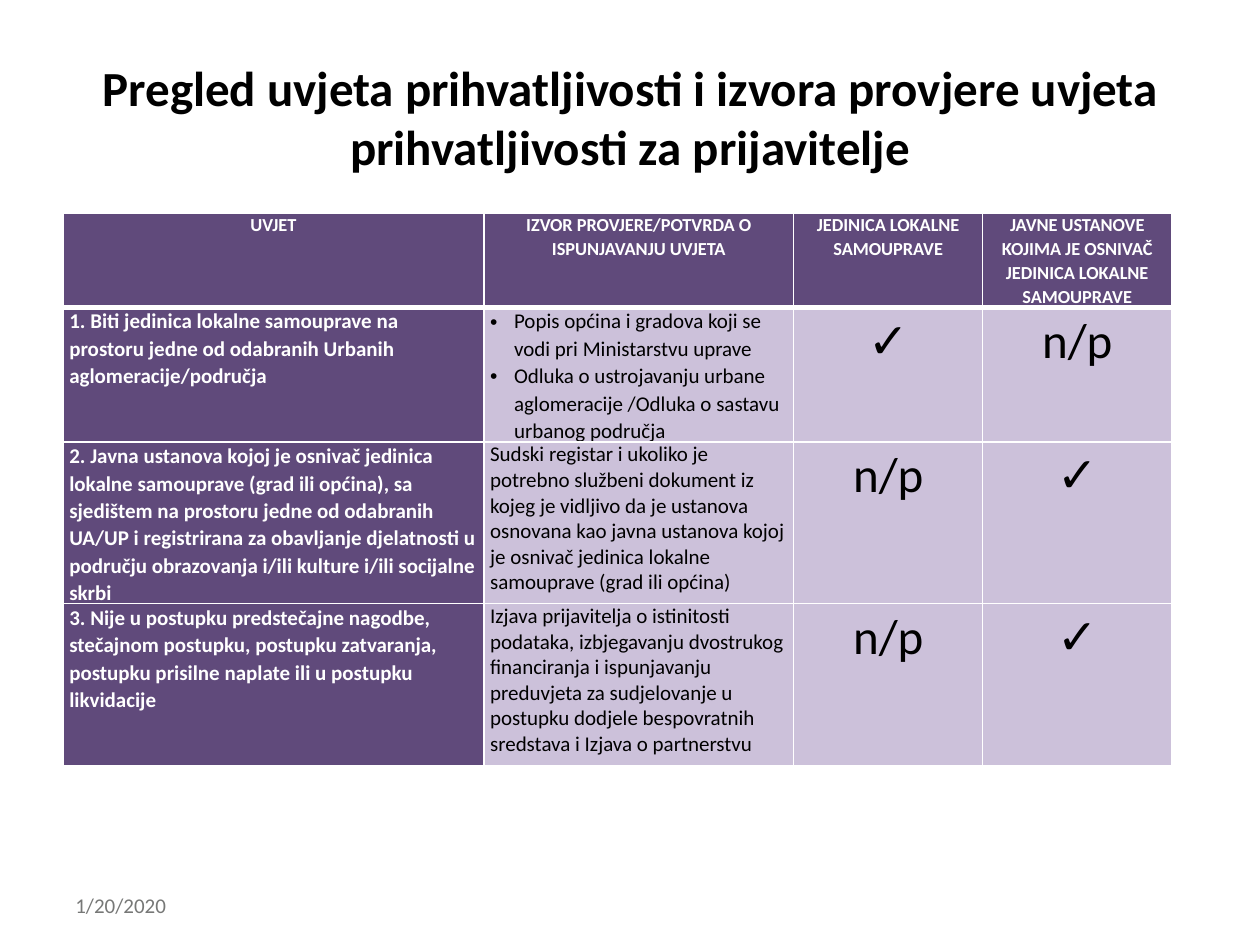
"""Build a slide with an overview table of eligibility conditions for applicants."""
import pptx
import pptx.dml.color
import pptx.enum.text
import pptx.oxml
import pptx.oxml.ns
import pptx.util
from lxml import etree

COLORS = {"black": "000000", "white": "FFFFFF", "gray": "777877",
          "purple": "604A7B", "lilac": "CCC1DA"}
CENTER = pptx.enum.text.PP_ALIGN.CENTER
LEFT = pptx.enum.text.PP_ALIGN.LEFT
MIDDLE = pptx.enum.text.MSO_ANCHOR.MIDDLE

TITLE = "Pregled uvjeta prihvatljivosti i izvora provjere uvjeta prihvatljivosti za prijavitelje"
HEADERS = ["UVJET", "IZVOR PROVJERE/POTVRDA O ISPUNJAVANJU UVJETA",
           "JEDINICA LOKALNE SAMOUPRAVE",
           "JAVNE USTANOVE KOJIMA JE OSNIVAČ JEDINICA LOKALNE SAMOUPRAVE"]
CONDITIONS = [
    ("1. Biti jedinica lokalne samouprave na prostoru jedne od odabranih Urbanih "
     "aglomeracije/područja",
     ["Popis općina i gradova koji se vodi pri Ministarstvu uprave",
      "Odluka o ustrojavanju urbane aglomeracije /Odluka o sastavu urbanog područja"],
     "✓", "n/p"),
    ("2. Javna ustanova kojoj je osnivač jedinica lokalne samouprave (grad ili općina), sa "
     "sjedištem na prostoru jedne od odabranih UA/UP i registrirana za obavljanje djelatnosti "
     "u području obrazovanja i/ili kulture i/ili socijalne skrbi",
     ["Sudski registar i ukoliko je potrebno službeni dokument iz kojeg je vidljivo da je "
      "ustanova osnovana kao javna ustanova kojoj je osnivač jedinica lokalne samouprave "
      "(grad ili općina)"],
     "n/p", "✓"),
    ("3. Nije u postupku predstečajne nagodbe, stečajnom postupku, postupku zatvaranja, "
     "postupku prisilne naplate ili u postupku likvidacije",
     ["Izjava prijavitelja o istinitosti podataka, izbjegavanju dvostrukog financiranja i "
      "ispunjavanju preduvjeta za sudjelovanje u postupku dodjele bespovratnih sredstava i "
      "Izjava o partnerstvu"],
     "n/p", "✓"),
]


class SlideBuilder:
    """Hold the style and the current slide, measured on a grid of 20 columns and 30 rows."""

    def __init__(self, prs, font="Calibri"):
        self.font = font
        self.col, self.row = prs.slide_width / 20, prs.slide_height / 30
        self.s = prs.slides.add_slide(prs.slide_layouts[5])

    def box(self, x, y, w, h):
        """Turn grid units into lengths."""
        return [pptx.util.Emu(round(n * unit))
                for n, unit in zip((x, y, w, h), (self.col, self.row) * 2)]

    def run(self, p, text, size, color, bold=False, align=LEFT, spacing=None):
        """Add one styled run to a paragraph."""
        p.alignment = align
        if spacing:
            p.line_spacing = spacing
        r = p.add_run()
        r.text = text
        r.font.name, r.font.size, r.font.bold = self.font, pptx.util.Pt(size), bold
        r.font.color.rgb = pptx.dml.color.RGBColor.from_string(COLORS[color])

    def title(self, text, *grid):
        """Place and fill the title placeholder."""
        sp = self.s.shapes.title
        sp.left, sp.top, sp.width, sp.height = self.box(*grid)
        sp.text_frame.vertical_anchor = MIDDLE
        self.run(sp.text_frame.paragraphs[0], text, 28, "black", True, CENTER)

    def text(self, text, size, color, *grid):
        """Add a text box with one line."""
        tf = self.s.shapes.add_textbox(*self.box(*grid)).text_frame
        tf.word_wrap, tf.vertical_anchor = True, MIDDLE
        self.run(tf.paragraphs[0], text, size, color)

    def bullet(self, p):
        """Give a paragraph a hanging round bullet."""
        pPr = p._p.get_or_add_pPr()
        indent = pptx.util.Inches(0.19)
        pPr.set("marL", str(indent))
        pPr.set("indent", str(-indent))
        etree.SubElement(pPr, pptx.oxml.ns.qn("a:buFont")).set("typeface", "Arial")
        etree.SubElement(pPr, pptx.oxml.ns.qn("a:buChar")).set("char", "•")

    def cell(self, cell, texts, fill, size, color, bold=False, align=LEFT,
             spacing=1.07, top=1, bottom=1):
        """Format a table cell and fill in its paragraphs, with bullets if there are several."""
        cell.margin_left = cell.margin_right = pptx.util.Inches(0.05)
        cell.margin_top = cell.margin_bottom = 0
        for side, width in (("L", 1), ("R", 1), ("T", top), ("B", bottom)):
            cell._tc.get_or_add_tcPr().append(pptx.oxml.parse_xml(
                f'<a:ln{side} {pptx.oxml.ns.nsdecls("a")} w="{pptx.util.Pt(width)}">'
                f'<a:solidFill><a:srgbClr val="{COLORS["white"]}"/></a:solidFill></a:ln{side}>'))
        cell.fill.solid()
        cell.fill.fore_color.rgb = pptx.dml.color.RGBColor.from_string(COLORS[fill])
        tf = cell.text_frame
        for i, text in enumerate(texts):
            p = tf.add_paragraph() if i else tf.paragraphs[0]
            if len(texts) > 1:
                self.bullet(p)
            self.run(p, text, size, color, bold, align, spacing)

    def table(self, x, y, widths, heights):
        """Add the conditions table."""
        grid = self.box(x, y, sum(widths), sum(heights))
        tbl = self.s.shapes.add_table(len(heights), len(widths), *grid).table
        for column, width in zip(tbl.columns, widths):
            column.width = round(width * self.col)
        for row, height in zip(tbl.rows, heights):
            row.height = round(height * self.row)
        for c, text in enumerate(HEADERS):
            self.cell(tbl.cell(0, c), [text], "purple", 10.5, "white", True, CENTER, bottom=3)
        for r, (condition, sources, *marks) in enumerate(CONDITIONS, 1):
            top = 3 if r == 1 else 1
            self.cell(tbl.cell(r, 0), [condition], "purple", 12, "white", True, top=top)
            self.cell(tbl.cell(r, 1), sources, "lilac", 12, "black", top=top,
                      spacing=1.07 if len(sources) > 1 else None)
            for c, mark in enumerate(marks, 2):
                self.cell(tbl.cell(r, c), [mark], "lilac", 28, "black", align=CENTER, top=top)


def main():
    """Build and save the presentation."""
    prs = pptx.Presentation()
    prs.slide_width, prs.slide_height = pptx.util.Inches(10), pptx.util.Inches(7.5)
    slide = SlideBuilder(prs)
    slide.text("1/20/2020", 12, "gray", 1, 27.92, 4.66, 1.6)
    slide.title(TITLE, 1, 1.2, 18, 5)
    slide.table(1, 6.76, [6.68, 4.92, 3, 3], [1.4, 3.28, 4.92, 5.16])
    prs.save("out.pptx")


if __name__ == "__main__":
    main()
